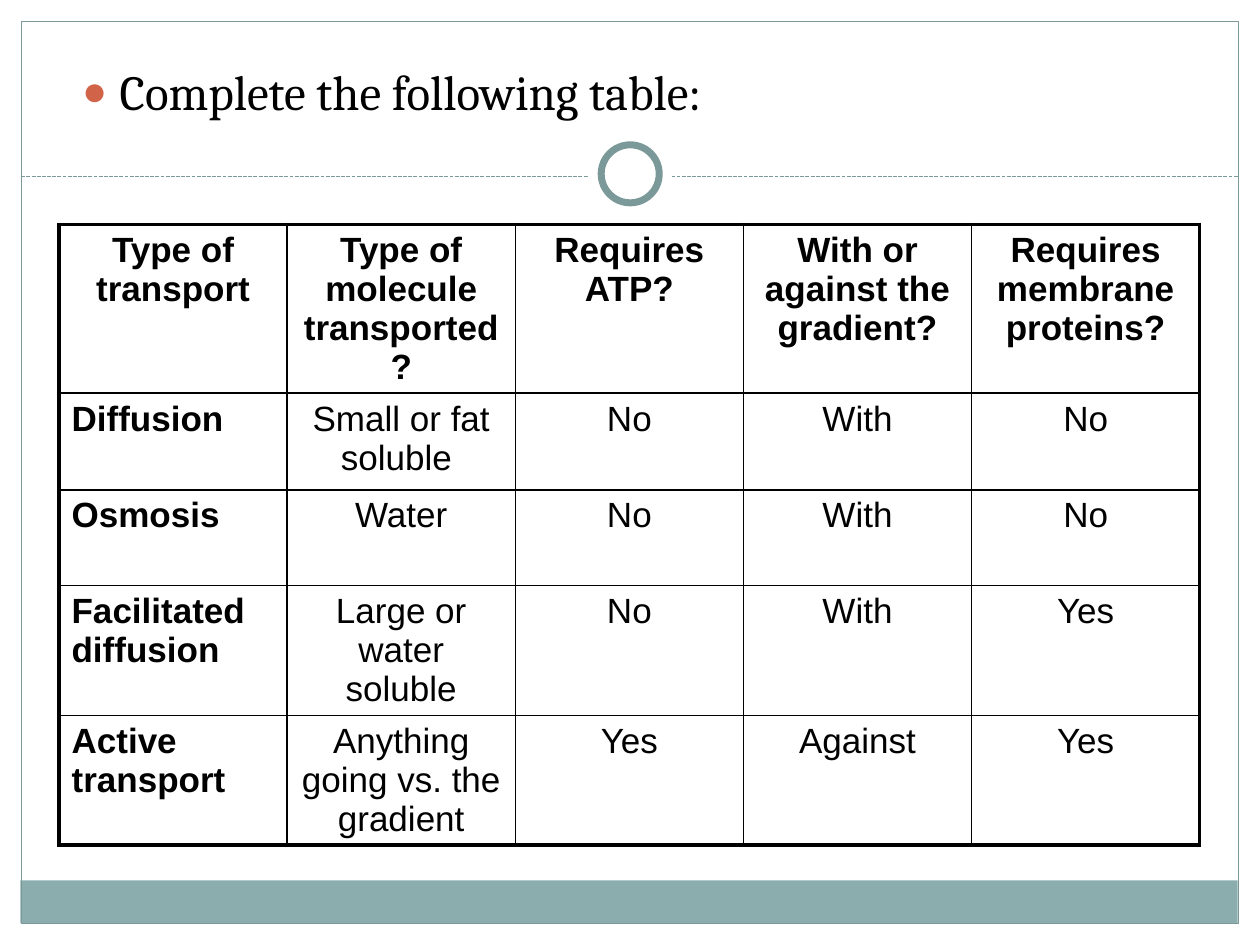
import pptx
import pptx.dml.color
import pptx.enum.dml
import pptx.enum.shapes
import pptx.enum.text
import pptx.oxml.ns
import pptx.util
from lxml import etree

Cm = pptx.util.Cm
Pt = pptx.util.Pt
Shape = pptx.enum.shapes.MSO_SHAPE
Align = pptx.enum.text.PP_ALIGN

COLORS = {
    "paper": "FFFFFF",
    "ink": "000000",
    "band": "8CADAE",
    "frame": "7C999A",
    "bullet": "D16349",
}
ROWS = [
    ["Type of transport", "Type of molecule transported?", "Requires ATP?",
     "With or against the gradient?", "Requires membrane proteins?"],
    ["Diffusion", "Small or fat soluble ", "No", "With", "No"],
    ["Osmosis", "Water", "No", "With", "No"],
    ["Facilitated diffusion", "Large or water soluble", "No", "With", "Yes"],
    ["Active transport", "Anything going vs. the gradient", "Yes", "Against", "Yes"],
]
ROW_HEIGHTS = [2.95, 1.95, 1.93, 2.06, 2.06]
COLUMN_WIDTH = 4.6


def rgb(name):
    return pptx.dml.color.RGBColor.from_string(COLORS[name])


def add_xml(parent, tag, **values):
    child = etree.SubElement(parent, pptx.oxml.ns.qn(tag))
    for name, value in values.items():
        child.set(name, str(value))
    return child


class SlideBuilder:
    """Holds the text style and the page being filled."""

    def __init__(self, page):
        self.page = page
        self.heading = {"name": "Cambria", "size": Pt(28)}
        self.label = {"name": "Arial", "size": Pt(20), "bold": True}
        self.answer = {**self.label, "bold": False}

    def add_span(self, para, text, style):
        span = para.add_run()
        span.text = text
        for name, value in style.items():
            setattr(span.font, name, value)
        span.font.color.rgb = rgb("ink")

    def shape(self, kind, bounds, fill=None, line=None, width=0.75):
        shape = self.page.shapes.add_shape(kind, *map(Cm, bounds))
        shape.shadow.inherit = False
        if fill:
            shape.fill.solid()
            shape.fill.fore_color.rgb = rgb(fill)
        else:
            shape.fill.background()
        if line:
            shape.line.color.rgb = rgb(line)
            shape.line.width = Pt(width)
        else:
            shape.line.fill.background()

    def dashed_line(self, left, right, top):
        line = self.page.shapes.add_connector(
            pptx.enum.shapes.MSO_CONNECTOR.STRAIGHT, Cm(left), Cm(top), Cm(right), Cm(top))
        line.line.color.rgb = rgb("frame")
        line.line.width = Pt(0.75)
        line.line.dash_style = pptx.enum.dml.MSO_LINE.SQUARE_DOT
        add_xml(line.element.spPr, "a:effectLst")

    def bullet_body(self, text, bounds):
        body = self.page.placeholders[1]
        for name, value in zip(("left", "top", "width", "height"), bounds):
            setattr(body, name, Cm(value))
        # Bring the text in front of the frame shapes
        body.element.getparent().append(body.element)
        body.text_frame.auto_size = pptx.enum.text.MSO_AUTO_SIZE.NONE
        body.text_frame.vertical_anchor = pptx.enum.text.MSO_ANCHOR.TOP
        para = body.text_frame.paragraphs[0]
        self.add_span(para, text, self.heading)
        props = para._p.get_or_add_pPr()
        props.set("marL", str(Cm(0.76)))
        props.set("indent", str(-Cm(0.76)))
        add_xml(add_xml(props, "a:buClr"), "a:srgbClr", val=COLORS["bullet"])
        add_xml(props, "a:buSzPct", val=85000)
        add_xml(props, "a:buFont", typeface="Arial")
        add_xml(props, "a:buChar", char="●")

    def borders(self, cell, widths):
        props = cell._tc.get_or_add_tcPr()
        for side, width in widths.items():
            line = add_xml(props, f"a:ln{side}", w=Pt(width))
            add_xml(add_xml(line, "a:solidFill"), "a:srgbClr", val=COLORS["ink"])

    def table(self, rows, left, top):
        last_row, last_column = len(rows) - 1, len(rows[0]) - 1
        table = self.page.shapes.add_table(
            len(rows), len(rows[0]), Cm(left), Cm(top),
            Cm(COLUMN_WIDTH * len(rows[0])), Cm(sum(ROW_HEIGHTS))).table
        table.first_row = table.horz_banding = False
        for column in table.columns:
            column.width = Cm(COLUMN_WIDTH)
        for row, height in zip(table.rows, ROW_HEIGHTS):
            row.height = Cm(height)
        for r, texts in enumerate(rows):
            for c, text in enumerate(texts):
                cell = table.cell(r, c)
                outer = {"L": c == 0, "R": c == last_column, "T": r == 0, "B": r == last_row}
                self.borders(cell, {side: 2.25 if edge else 1 for side, edge in outer.items()})
                cell.fill.background()
                para = cell.text_frame.paragraphs[0]
                para.alignment = Align.LEFT if c == 0 and r > 0 else Align.CENTER
                self.add_span(para, text, self.label if r == 0 or c == 0 else self.answer)


def main():
    deck = pptx.Presentation()
    deck.slide_width, deck.slide_height = Cm(25.4), Cm(19.05)
    page = deck.slides.add_slide(deck.slide_layouts[1])
    title = page.shapes.title.element
    title.getparent().remove(title)
    builder = SlideBuilder(page)

    margins = [(0, 0, 25.4, 3.86), (0, 0, 0.43, 19.05), (24.97, 0, 0.43, 19.05)]
    for bounds in margins:
        builder.shape(Shape.RECTANGLE, bounds, fill="paper")
    builder.shape(Shape.RECTANGLE, (0.41, 17.75, 24.54, 0.86), fill="band")
    builder.shape(Shape.RECTANGLE, (0.43, 0.43, 24.54, 18.19), line="frame")
    builder.dashed_line(0.43, 24.97, 3.56)
    builder.shape(Shape.OVAL, (11.85, 2.67, 1.7, 1.7), fill="paper")
    builder.shape(Shape.OVAL, (12.12, 2.92, 1.17, 1.17), fill="paper", line="frame", width=4)

    builder.bullet_body("Complete the following table:", (1.4, 1.12, 22.63, 3.07))
    builder.table(ROWS, 1.19, 4.52)
    deck.save("out.pptx")


if __name__ == "__main__":
    main()
